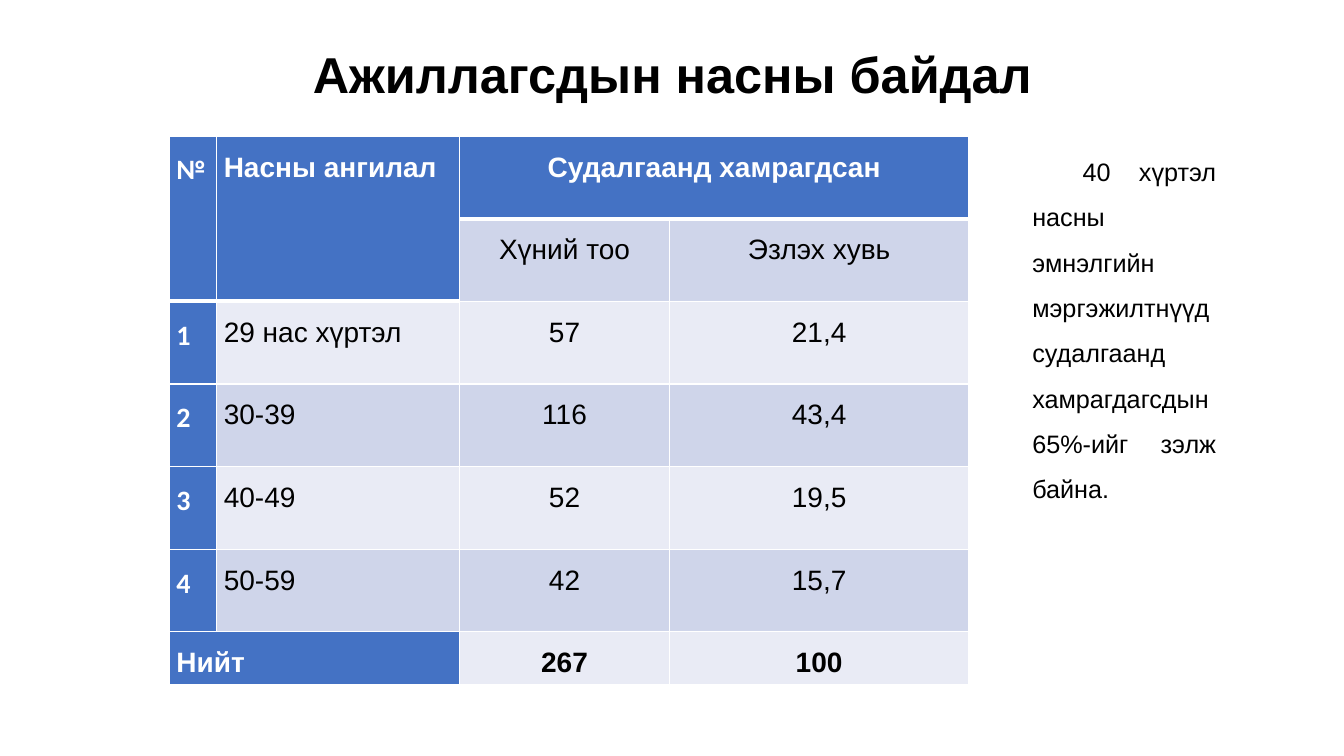
from dataclasses import dataclass
from typing import Any

import pptx
import pptx.dml.color
import pptx.enum.text
import pptx.oxml
import pptx.oxml.ns
import pptx.util

Inches = pptx.util.Inches
Align = pptx.enum.text.PP_ALIGN
Anchor = pptx.enum.text.MSO_ANCHOR


@dataclass(frozen=True)
class Theme:
    sans: str = "Arial"
    digit: str = "Calibri"
    white: str = "FFFFFF"
    black: str = "000000"
    blue: str = "4472C4"
    dark: str = "CFD5EA"
    light: str = "E9EBF5"
    title: int = 36
    body: int = 20
    note: int = 18
    thin: int = 1
    thick: int = 3


@dataclass(frozen=True)
class Style:
    size: int
    color: str
    bold: bool = False
    face: str = "Arial"
    align: Any = Align.LEFT
    lead: float = 1.5


@dataclass(frozen=True)
class Box:
    text: str
    left: float
    top: float
    width: float
    height: float
    style: Style
    anchor: Any = Anchor.TOP
    indent: float = 0


@dataclass(frozen=True)
class Cell:
    row: int
    col: int
    text: str
    fill: str
    style: Style
    down: int = 1
    across: int = 1


THEME = Theme()
WIDTHS = [0.47, 2.41, 2.08, 2.97]
HEIGHTS = [0.82] * 6 + [0.52]
GROUPS = [
    ("29 нас хүртэл", "57", "21,4"),
    ("30-39", "116", "43,4"),
    ("40-49", "52", "19,5"),
    ("50-59", "42", "15,7"),
]
HEAD = Style(THEME.body, THEME.white, True)
SPAN = Style(THEME.body, THEME.white, True, align=Align.CENTER)
INDEX = Style(THEME.body, THEME.white, True, THEME.digit)
LABEL = Style(THEME.body, THEME.black)
VALUE = Style(THEME.body, THEME.black, align=Align.CENTER)
TOTAL = Style(THEME.body, THEME.black, True, align=Align.CENTER)
BOXES = [
    Box("Ажиллагсдын насны байдал", 0.92, 0.36, 11.5, 0.82,
        Style(THEME.title, THEME.black, True, align=Align.CENTER, lead=0.9),
        Anchor.MIDDLE),
    Box("40 хүртэл насны эмнэлгийн мэргэжилтнүүд судалгаанд "
        "хамрагдагсдын 65%-ийг зэлж байна.", 10.14, 1.35, 2.02, 3.69,
        Style(THEME.note, THEME.black, align=Align.JUSTIFY), indent=0.5),
]


def apply(item: Any, values: dict[str, Any]) -> None:
    for name, value in values.items():
        setattr(item, name, value)


def write(frame: Any, text: str, style: Style) -> Any:
    para = frame.paragraphs[0]
    apply(para, {"alignment": style.align, "line_spacing": style.lead})
    run = para.add_run()
    run.text = text
    apply(run.font, {"name": style.face, "bold": style.bold,
                     "size": pptx.util.Pt(style.size)})
    run.font.color.rgb = pptx.dml.color.RGBColor.from_string(style.color)
    return para


def draw_box(slide: Any, box: Box) -> None:
    place = map(Inches, (box.left, box.top, box.width, box.height))
    frame = slide.shapes.add_textbox(*place).text_frame
    apply(frame, {"word_wrap": True, "vertical_anchor": box.anchor})
    para = write(frame, box.text, box.style)
    if box.indent:
        para._p.get_or_add_pPr().set("indent", str(Inches(box.indent)))


def edge(cell: Any, base: int) -> None:
    sides = {"lnL": THEME.thin, "lnR": THEME.thin,
             "lnT": THEME.thin, "lnB": base}
    for spot, (side, width) in enumerate(sides.items()):
        line = pptx.oxml.parse_xml(
            f'<a:{side} {pptx.oxml.ns.nsdecls("a")} w="{pptx.util.Pt(width)}">'
            f'<a:solidFill><a:srgbClr val="{THEME.white}"/></a:solidFill>'
            f'</a:{side}>')
        cell._tc.get_or_add_tcPr().insert(spot, line)


def draw_cell(table: Any, item: Cell) -> None:
    last = (item.row + item.down - 1, item.col + item.across - 1)
    first = table.cell(item.row, item.col)
    if item.down * item.across > 1:
        first.merge(table.cell(*last))
    for row in range(item.row, last[0] + 1):
        for col in range(item.col, last[1] + 1):
            cell = table.cell(row, col)
            cell.fill.solid()
            tint = pptx.dml.color.RGBColor.from_string(item.fill)
            cell.fill.fore_color.rgb = tint
            edge(cell, THEME.thick if item.row == 0 else THEME.thin)
    apply(first, {"margin_left": Inches(0.07), "margin_right": Inches(0.07),
                  "margin_top": 0, "margin_bottom": 0})
    write(first.text_frame, item.text, item.style)


def list_cells() -> list[Cell]:
    cells = [
        Cell(0, 0, "№", THEME.blue, INDEX, down=2),
        Cell(0, 1, "Насны ангилал", THEME.blue, HEAD, down=2),
        Cell(0, 2, "Судалгаанд хамрагдсан", THEME.blue, SPAN, across=2),
        Cell(1, 2, "Хүний тоо", THEME.dark, VALUE),
        Cell(1, 3, "Эзлэх хувь", THEME.dark, VALUE),
    ]
    for rank, texts in enumerate(GROUPS, 1):
        band = THEME.light if rank % 2 else THEME.dark
        cells.append(Cell(rank + 1, 0, str(rank), THEME.blue, INDEX))
        for col, text in enumerate(texts, 1):
            style = LABEL if col == 1 else VALUE
            cells.append(Cell(rank + 1, col, text, band, style))
    end = len(HEIGHTS) - 1
    cells.append(Cell(end, 0, "Нийт", THEME.blue, HEAD, across=2))
    for col, text in enumerate(("267", "100"), 2):
        cells.append(Cell(end, col, text, THEME.light, TOTAL))
    return cells


def draw_table(slide: Any) -> None:
    place = map(Inches, (1.68, 1.35, sum(WIDTHS), sum(HEIGHTS)))
    table = slide.shapes.add_table(len(HEIGHTS), len(WIDTHS), *place).table
    apply(table, {"first_row": False, "horz_banding": False})
    for column, width in zip(table.columns, WIDTHS):
        column.width = Inches(width)
    for row, height in zip(table.rows, HEIGHTS):
        row.height = Inches(height)
    for item in list_cells():
        draw_cell(table, item)


def main() -> None:
    deck = pptx.Presentation()
    apply(deck, {"slide_width": Inches(13.33), "slide_height": Inches(7.5)})
    slide = deck.slides.add_slide(deck.slide_layouts[6])
    for box in BOXES:
        draw_box(slide, box)
    draw_table(slide)
    deck.save("out.pptx")


if __name__ == "__main__":
    main()
